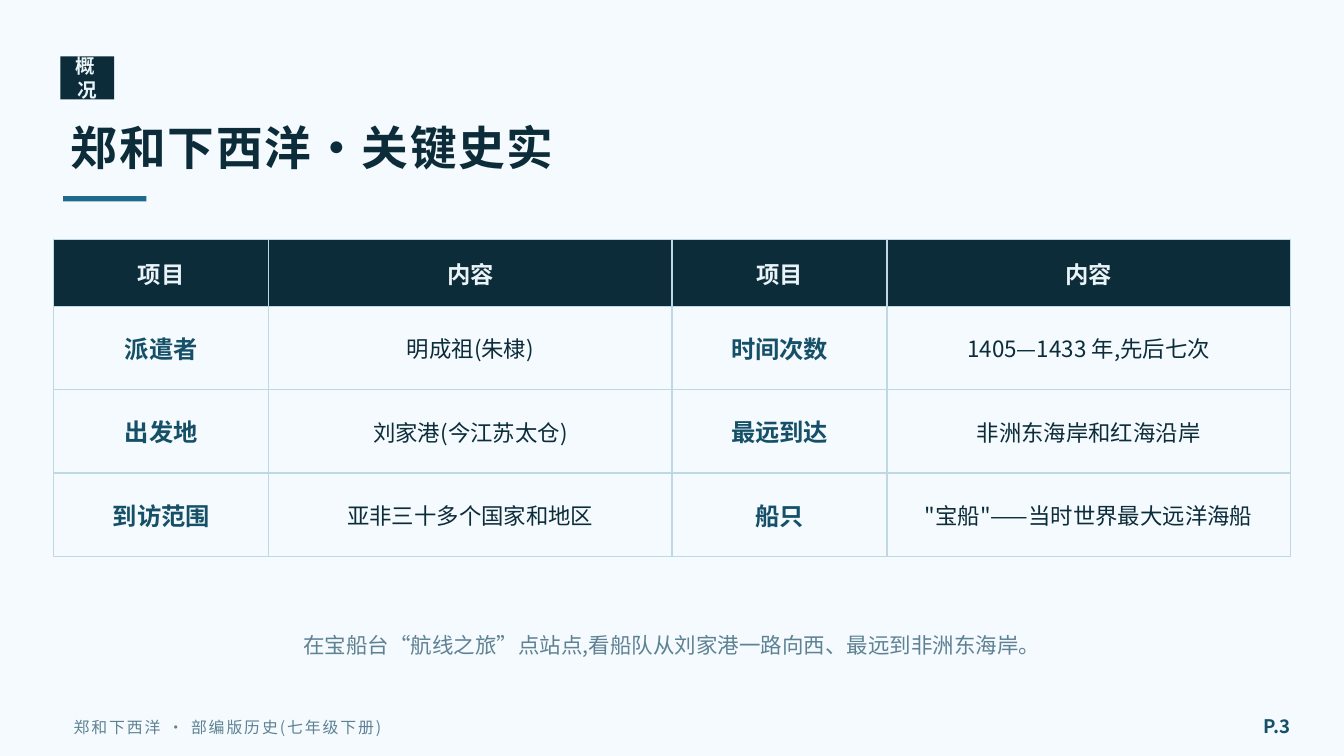
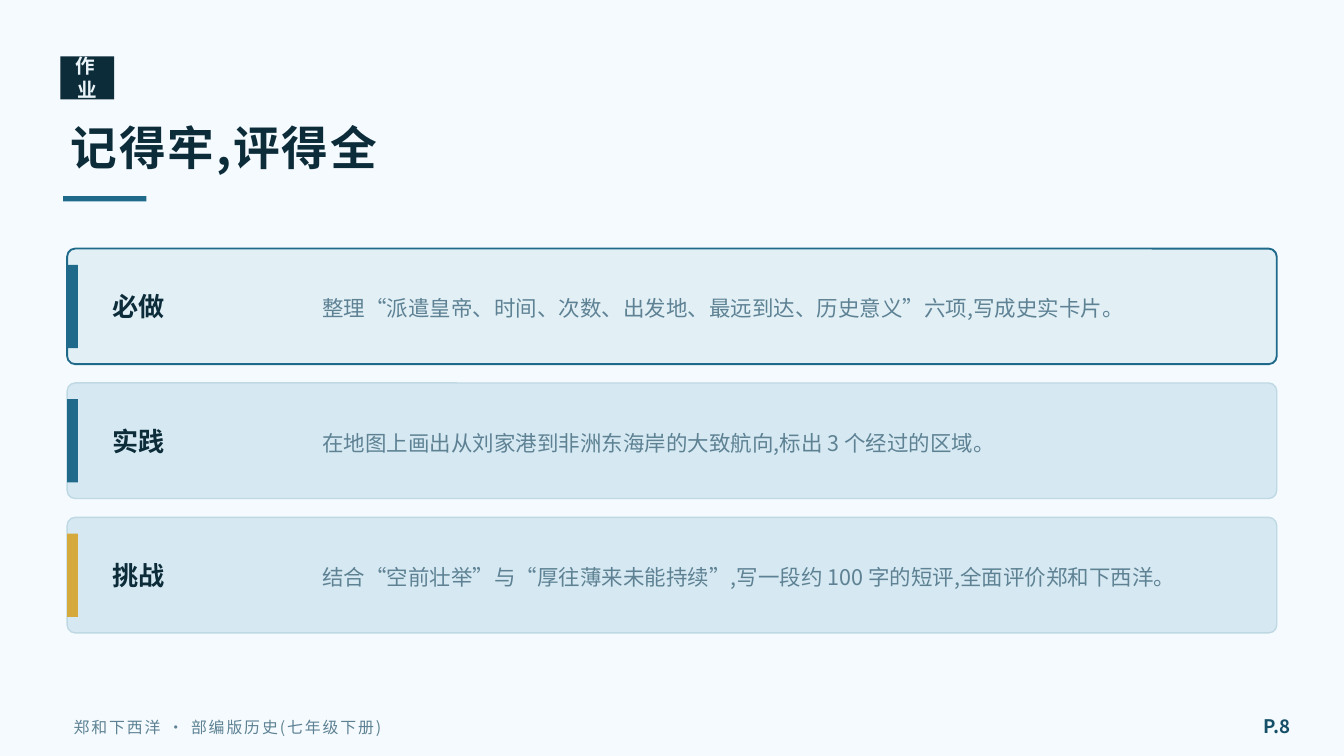
"""Build two history lesson slides: a key facts table and a homework list."""
import pptx
import pptx.dml.color
import pptx.enum.shapes
import pptx.enum.text
import pptx.oxml.ns
import pptx.util
from lxml import etree

Inches = pptx.util.Inches
Pt = pptx.util.Pt
RGBColor = pptx.dml.color.RGBColor
SHAPE = pptx.enum.shapes.MSO_SHAPE
ALIGN = pptx.enum.text.PP_ALIGN
MIDDLE = pptx.enum.text.MSO_ANCHOR.MIDDLE
qn = pptx.oxml.ns.qn

FONT = "Noto Sans CJK SC"
PAPER = RGBColor(0xF4, 0xFA, 0xFD)
INK = RGBColor(0x0C, 0x2C, 0x3A)
FOAM = RGBColor(0xEA, 0xF4, 0xF8)
SEA = RGBColor(0x1F, 0x6A, 0x8A)
DEEP = RGBColor(0x15, 0x50, 0x68)
MUTED = RGBColor(0x5E, 0x82, 0x94)
BORDER = RGBColor(0xBF, 0xD9, 0xE4)
CARD = RGBColor(0xD6, 0xE9, 0xF2)
CARD_LIGHT = RGBColor(0xE2, 0xF0, 0xF6)
GOLD = RGBColor(0xD6, 0xA9, 0x3C)

FOOTER = "郑和下西洋 · 部编版历史(七年级下册)"
FACTS = [
    ("项目", "内容", "项目", "内容"),
    ("派遣者", "明成祖(朱棣)", "时间次数", "1405—1433 年,先后七次"),
    ("出发地", "刘家港(今江苏太仓)", "最远到达", "非洲东海岸和红海沿岸"),
    ("到访范围", "亚非三十多个国家和地区", "船只", "\"宝船\"——当时世界最大远洋海船"),
]
COLUMN_WIDTHS = (1.6, 3, 1.6, 3)
ROW_HEIGHTS = (0.5, 0.62, 0.62, 0.62)
FACTS_HINT = "在宝船台“航线之旅”点站点,看船队从刘家港一路向西、最远到非洲东海岸。"
TASKS = [
    ("必做", "整理“派遣皇帝、时间、次数、出发地、最远到达、历史意义”六项,写成史实卡片。",
     CARD_LIGHT, SEA, 1, SEA),
    ("实践", "在地图上画出从刘家港到非洲东海岸的大致航向,标出 3 个经过的区域。",
     CARD, BORDER, 0.75, SEA),
    ("挑战", "结合“空前壮举”与“厚往薄来未能持续”,写一段约 100 字的短评,全面评价郑和下西洋。",
     CARD, BORDER, 0.75, GOLD),
]


def write(frame, text, size, color, bold=False, align=ALIGN.LEFT, tracking=0, leading=None):
    para = frame.paragraphs[0]
    para.alignment = align
    if leading:
        para.line_spacing = Pt(leading)
    span = para.add_run()
    span.text = text
    span.font.name = FONT
    span.font.size = Pt(size)
    span.font.bold = bold
    span.font.color.rgb = color
    properties = span.font._element
    properties.set("lang", "zh-CN")
    if tracking:
        properties.set("spc", str(tracking * 100))
    east_asian = etree.Element(qn("a:ea"), typeface=FONT)
    properties.find(qn("a:latin")).addnext(east_asian)


def add_text(page, area, text, size, color, **style):
    box = page.shapes.add_textbox(*map(Inches, area))
    box.text_frame.word_wrap = True
    box.text_frame.vertical_anchor = MIDDLE
    write(box.text_frame, text, size, color, **style)


def add_block(page, area, fill, kind=SHAPE.RECTANGLE, line=None, line_width=1):
    block = page.shapes.add_shape(kind, *map(Inches, area))
    block.shadow.inherit = False
    block.fill.solid()
    block.fill.fore_color.rgb = fill
    if line is None:
        block.line.fill.background()
    else:
        block.line.color.rgb = line
        block.line.width = Pt(line_width)
    return block


def add_page(deck, tag, title):
    page = deck.slides.add_slide(deck.slide_layouts[6])
    page.background.fill.solid()
    page.background.fill.fore_color.rgb = PAPER
    add_block(page, (0.45, 0.42, 0.4, 0.32), INK)
    add_text(page, (0.45, 0.41, 0.4, 0.34), tag, 10.5, FOAM, bold=True,
             align=ALIGN.CENTER, tracking=2)
    add_text(page, (0.43, 0.78, 9, 0.62), title, 25, INK, bold=True, tracking=1)
    add_block(page, (0.47, 1.46, 0.62, 0.04), SEA)
    return page


def add_footer(page, number):
    add_text(page, (0.45, 5.26, 6.5, 0.3), FOOTER, 8.5, MUTED, tracking=1)
    add_text(page, (9.1, 5.24, 0.6, 0.32), f"P.{number}", 10, DEEP, bold=True,
             align=ALIGN.RIGHT)


def add_borders(cell):
    properties = cell._tc.get_or_add_tcPr()
    for side in ("lnL", "lnR", "lnT", "lnB"):
        edge = etree.SubElement(properties, qn(f"a:{side}"), w=str(Pt(0.75)))
        fill = etree.SubElement(edge, qn("a:solidFill"))
        etree.SubElement(fill, qn("a:srgbClr"), val=str(BORDER))


def add_facts_table(page):
    area = (0.4, 1.78, sum(COLUMN_WIDTHS), sum(ROW_HEIGHTS))
    table = page.shapes.add_table(len(FACTS), len(COLUMN_WIDTHS), *map(Inches, area)).table
    for column, width in zip(table.columns, COLUMN_WIDTHS):
        column.width = Inches(width)
    for row, height in zip(table.rows, ROW_HEIGHTS):
        row.height = Inches(height)
    for row_index, texts in enumerate(FACTS):
        for column_index, text in enumerate(texts):
            cell = table.cell(row_index, column_index)
            is_header = row_index == 0
            is_label = column_index % 2 == 0
            if is_header:
                size, color = 12.5, FOAM
            elif is_label:
                size, color = 13, DEEP
            else:
                size, color = 12, INK
            add_borders(cell)
            cell.fill.solid()
            cell.fill.fore_color.rgb = INK if is_header else PAPER
            cell.vertical_anchor = MIDDLE
            write(cell.text_frame, text, size, color, bold=is_header or is_label,
                  align=ALIGN.CENTER)


def add_task(page, top, name, detail, fill, line, line_width, accent):
    card = add_block(page, (0.5, top, 9, 0.86), fill, SHAPE.ROUNDED_RECTANGLE, line, line_width)
    card.adjustments[0] = 0.07
    add_block(page, (0.5, top + 0.12, 0.08, 0.62), accent)
    add_text(page, (0.74, top + 0.1, 1.4, 0.66), name, 14, INK, bold=True)
    add_text(page, (2.3, top + 0.08, 7, 0.7), detail, 11.5, MUTED, leading=16)


def main():
    deck = pptx.Presentation()
    deck.slide_width = Inches(10)
    deck.slide_height = deck.slide_width * 9 // 16

    facts_page = add_page(deck, "概况", "郑和下西洋·关键史实")
    add_facts_table(facts_page)
    add_text(facts_page, (0.5, 4.55, 9, 0.5), FACTS_HINT, 11.5, MUTED, align=ALIGN.CENTER)
    add_footer(facts_page, 3)

    homework_page = add_page(deck, "作业", "记得牢,评得全")
    for index, task in enumerate(TASKS):
        add_task(homework_page, 1.85 + index, *task)
    add_footer(homework_page, 8)

    deck.save("out.pptx")


if __name__ == "__main__":
    main()
